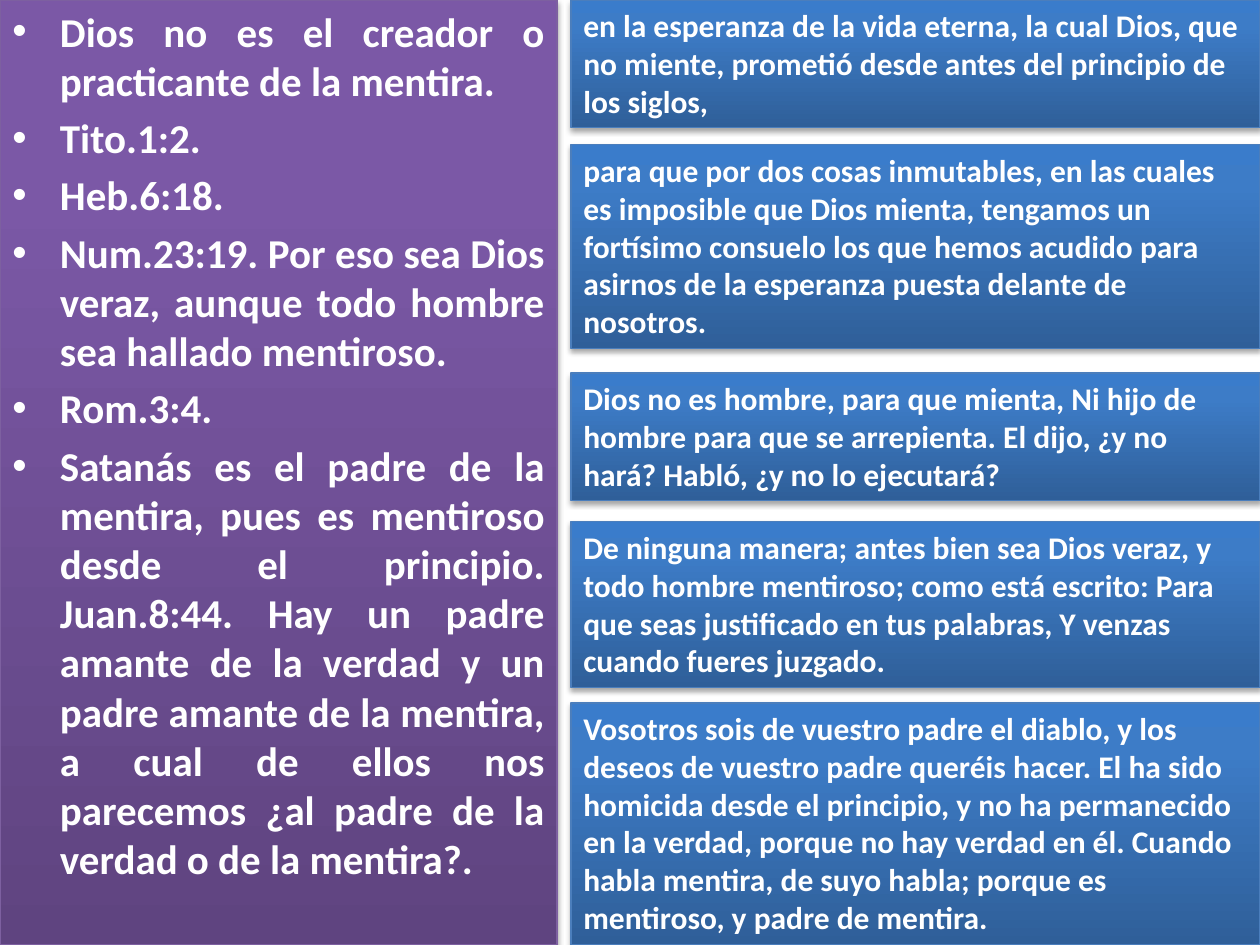
from dataclasses import dataclass

import lxml.etree
import pptx
import pptx.dml.color
import pptx.enum.shapes
import pptx.enum.text
import pptx.oxml
import pptx.oxml.ns
import pptx.util
from pptx.util import Cm

SLIDE_WIDTH, SLIDE_HEIGHT = 25.4, 19.05
VERSE_LEFT = 11.51
LINE_HEIGHT, VERSE_PADDING = 0.77, 0.26
A_NS = "http://schemas.openxmlformats.org/drawingml/2006/main"


@dataclass(frozen=True)
class Palette:
    stops: tuple[tuple[int, str], ...]
    line: str


@dataclass(frozen=True)
class Verse:
    top: float
    lines: int
    text: str

    @property
    def height(self) -> float:
        return self.lines * LINE_HEIGHT + VERSE_PADDING


PURPLE = Palette(((0, "5F4480"), (80, "7B58A6"), (100, "7C57A8")), "7D60A0")
BLUE = Palette(((0, "2F5F99"), (80, "3D7CC7"), (100, "3A7CCB")), "4B7EBC")

POINTS = [
    "Dios no es el creador o practicante de la mentira.",
    "Tito.1:2.",
    "Heb.6:18.",
    "Num.23:19. Por eso sea Dios veraz, aunque todo hombre sea hallado mentiroso.",
    "Rom.3:4.",
    "Satanás es el padre de la mentira, pues es mentiroso desde el principio. "
    "Juan.8:44. Hay un padre amante de la verdad y un padre amante de la mentira, "
    "a cual de ellos nos parecemos ¿al padre de la verdad o de la mentira?.",
]

VERSES = [
    Verse(0, 3, "en la esperanza de la vida eterna, la cual Dios, que no miente, "
                "prometió desde antes del principio de los siglos,"),
    Verse(2.92, 5, "para que por dos cosas inmutables, en las cuales es imposible que "
                   "Dios mienta, tengamos un fortísimo consuelo los que hemos acudido "
                   "para asirnos de la esperanza puesta delante de nosotros."),
    Verse(7.52, 3, "Dios no es hombre, para que mienta, Ni hijo de hombre para que se "
                   "arrepienta. El dijo, ¿y no hará? Habló, ¿y no lo ejecutará?"),
    Verse(10.52, 4, "De ninguna manera; antes bien sea Dios veraz, y todo hombre "
                    "mentiroso; como está escrito: Para que seas justificado en tus "
                    "palabras, Y venzas cuando fueres juzgado."),
    Verse(14.17, 6, "Vosotros sois de vuestro padre el diablo, y los deseos de vuestro "
                    "padre queréis hacer. El ha sido homicida desde el principio, y no "
                    "ha permanecido en la verdad, porque no hay verdad en él. Cuando "
                    "habla mentira, de suyo habla; porque es mentiroso, y padre de "
                    "mentira."),
]


def color(value: str) -> pptx.dml.color.RGBColor:
    return pptx.dml.color.RGBColor.from_string(value)


def set_gradient(shape, palette: Palette) -> None:
    """Fill the shape from bottom to top with the palette's stops."""
    shape.fill.gradient()
    shape.fill.gradient_angle = 90
    stop_list = shape.element.spPr.find(".//" + pptx.oxml.ns.qn("a:gsLst"))
    stop_list.clear()
    for percent, value in palette.stops:
        stop_list.append(pptx.oxml.parse_xml(
            f'<a:gs xmlns:a="{A_NS}" pos="{percent * 1000}">'
            f'<a:srgbClr val="{value}"/></a:gs>'))


def add_shadow(shape) -> None:
    shape.shadow.inherit = False
    effects = shape.element.spPr.find(pptx.oxml.ns.qn("a:effectLst"))
    effects.append(pptx.oxml.parse_xml(
        f'<a:outerShdw xmlns:a="{A_NS}" blurRad="{pptx.util.Pt(3.1)}" '
        f'dist="{pptx.util.Pt(1.8)}" dir="5400000" rotWithShape="0">'
        '<a:srgbClr val="000000"><a:alpha val="35000"/></a:srgbClr></a:outerShdw>'))


def add_panel(slide, left: float, top: float, width: float, height: float,
              palette: Palette):
    panel = slide.shapes.add_shape(pptx.enum.shapes.MSO_SHAPE.RECTANGLE,
                                   Cm(left), Cm(top), Cm(width), Cm(height))
    set_gradient(panel, palette)
    panel.line.color.rgb = color(palette.line)
    panel.line.width = pptx.util.Pt(0.75)
    add_shadow(panel)
    panel.text_frame.word_wrap = True
    panel.text_frame.vertical_anchor = pptx.enum.text.MSO_ANCHOR.TOP
    return panel


def write(para, text: str, *, size: float, align=pptx.enum.text.PP_ALIGN.LEFT,
          bullet: bool = False) -> None:
    para.alignment = align
    span = para.add_run()
    span.text = text
    span.font.name = "Calibri"
    span.font.size = pptx.util.Pt(size)
    span.font.bold = True
    span.font.color.rgb = color("FFFFFF")
    if bullet:
        add_bullet(para)


def add_bullet(para) -> None:
    """Give the paragraph a hanging bullet and a gap of a fifth of a line."""
    properties = para._p.get_or_add_pPr()
    properties.set("marL", str(Cm(0.96)))
    properties.set("indent", str(-Cm(0.96)))
    spacing = lxml.etree.SubElement(properties, pptx.oxml.ns.qn("a:spcBef"))
    lxml.etree.SubElement(spacing, pptx.oxml.ns.qn("a:spcPct"), val="20000")
    lxml.etree.SubElement(properties, pptx.oxml.ns.qn("a:buFont"), typeface="Arial")
    lxml.etree.SubElement(properties, pptx.oxml.ns.qn("a:buChar"), char="•")


def add_points(slide) -> None:
    frame = add_panel(slide, 0, 0, 11.23, SLIDE_HEIGHT, PURPLE).text_frame
    for index, text in enumerate(POINTS):
        para = frame.add_paragraph() if index else frame.paragraphs[0]
        write(para, text, size=23.4, align=pptx.enum.text.PP_ALIGN.JUSTIFY, bullet=True)


def add_verse(slide, verse: Verse) -> None:
    frame = add_panel(slide, VERSE_LEFT, verse.top, SLIDE_WIDTH - VERSE_LEFT,
                      verse.height, BLUE).text_frame
    frame.auto_size = pptx.enum.text.MSO_AUTO_SIZE.SHAPE_TO_FIT_TEXT
    write(frame.paragraphs[0], verse.text, size=18)


def main() -> None:
    deck = pptx.Presentation()
    deck.slide_width, deck.slide_height = Cm(SLIDE_WIDTH), Cm(SLIDE_HEIGHT)
    page = deck.slides.add_slide(deck.slide_layouts[6])
    add_points(page)
    for verse in VERSES:
        add_verse(page, verse)
    deck.save("out.pptx")


if __name__ == "__main__":
    main()
